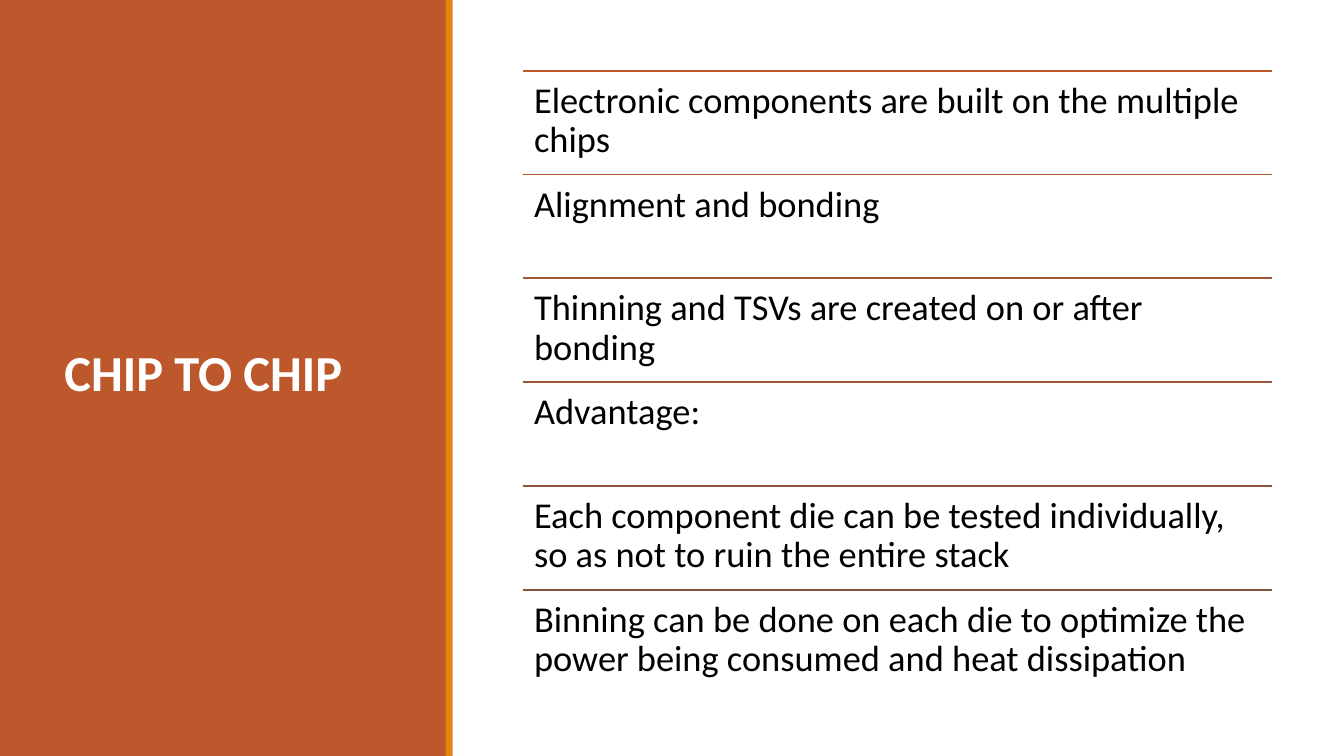
from lxml.etree import SubElement
from pptx import Presentation
from pptx.dml.color import RGBColor
from pptx.enum.shapes import MSO_CONNECTOR, MSO_SHAPE
from pptx.enum.text import MSO_ANCHOR, MSO_AUTO_SIZE, PP_ALIGN
from pptx.oxml.ns import qn
from pptx.util import Cm, Pt

RUST = RGBColor(0xBD, 0x58, 0x2C)
ORANGE = RGBColor(0xE4, 0x83, 0x12)
WHITE = RGBColor(0xFF, 0xFF, 0xFF)
BLACK = RGBColor(0x00, 0x00, 0x00)
FONT = "Calibri"

STATEMENTS = [
    ("Electronic components are built on the multiple chips", RGBColor(0xBB, 0x58, 0x2B)),
    ("Alignment and bonding", RGBColor(0xAF, 0x57, 0x30)),
    ("Thinning and TSVs are created on or after bonding", RGBColor(0xA4, 0x56, 0x34)),
    ("Advantage:", RGBColor(0x99, 0x56, 0x38)),
    ("Each component die can be tested individually, so as not to ruin the entire stack",
     RGBColor(0x8F, 0x56, 0x3B)),
    ("Binning can be done on each die to optimize the power being consumed and heat dissipation",
     RGBColor(0x84, 0x54, 0x3F)),
]


def add_block(slide, left, top, width, height, color):
    block = slide.shapes.add_shape(MSO_SHAPE.RECTANGLE, left, top, width, height)
    block.shadow.inherit = False
    block.fill.solid()
    block.fill.fore_color.rgb = color
    block.line.fill.background()
    return block


def write_text(frame, text, size, color, spacing, bold=False):
    frame.word_wrap = True
    frame.auto_size = MSO_AUTO_SIZE.NONE
    paragraph = frame.paragraphs[0]
    paragraph.text = text
    paragraph.alignment = PP_ALIGN.LEFT
    paragraph.line_spacing = spacing
    paragraph.font.name = FONT
    paragraph.font.size = Pt(size)
    paragraph.font.bold = bold
    paragraph.font.color.rgb = color


def add_title_panel(slide, left, top, width, height):
    panel = add_block(slide, left, top, width, height, RUST)
    add_block(slide, left + width - Cm(0.02), top, Cm(0.18), height, ORANGE)
    heading = slide.shapes.title
    panel.element.addnext(heading.element)
    heading.left, heading.top = left + Cm(1.37), top + Cm(1.45)
    heading.width, heading.height = width - Cm(2.69), height - Cm(3.02)
    heading.text_frame.vertical_anchor = MSO_ANCHOR.MIDDLE
    write_text(heading.text_frame, "CHIP TO CHIP", 36, WHITE, 0.85, bold=True)


def add_statement(slide, left, top, width, height, text, rule_color):
    rule = slide.shapes.add_connector(MSO_CONNECTOR.STRAIGHT, left, top, left + width, top)
    rule.line.color.rgb = rule_color
    rule.line.width = Pt(1.25)
    SubElement(rule.element.spPr, qn("a:effectLst"))
    frame = slide.shapes.add_textbox(left, top, width, height).text_frame
    frame.margin_left = frame.margin_right = Cm(0.28)
    frame.margin_top = frame.margin_bottom = Cm(0.28)
    frame.vertical_anchor = MSO_ANCHOR.TOP
    write_text(frame, text, 26, BLACK, 0.9)


def add_statement_list(slide, left, top, width, height):
    row_height = height // len(STATEMENTS)
    for row, (text, rule_color) in enumerate(STATEMENTS):
        add_statement(slide, left, top + row * row_height, width, row_height, text, rule_color)


def main():
    deck = Presentation()
    deck.slide_width, deck.slide_height = Cm(33.87), Cm(19.05)
    slide = deck.slides.add_slide(deck.slide_layouts[5])
    slide.background.fill.solid()
    slide.background.fill.fore_color.rgb = WHITE
    add_title_panel(slide, 0, 0, Cm(11.25), deck.slide_height)
    add_statement_list(slide, Cm(13.18), Cm(1.78), Cm(18.87), Cm(15.7))
    deck.save("out.pptx")


if __name__ == "__main__":
    main()
